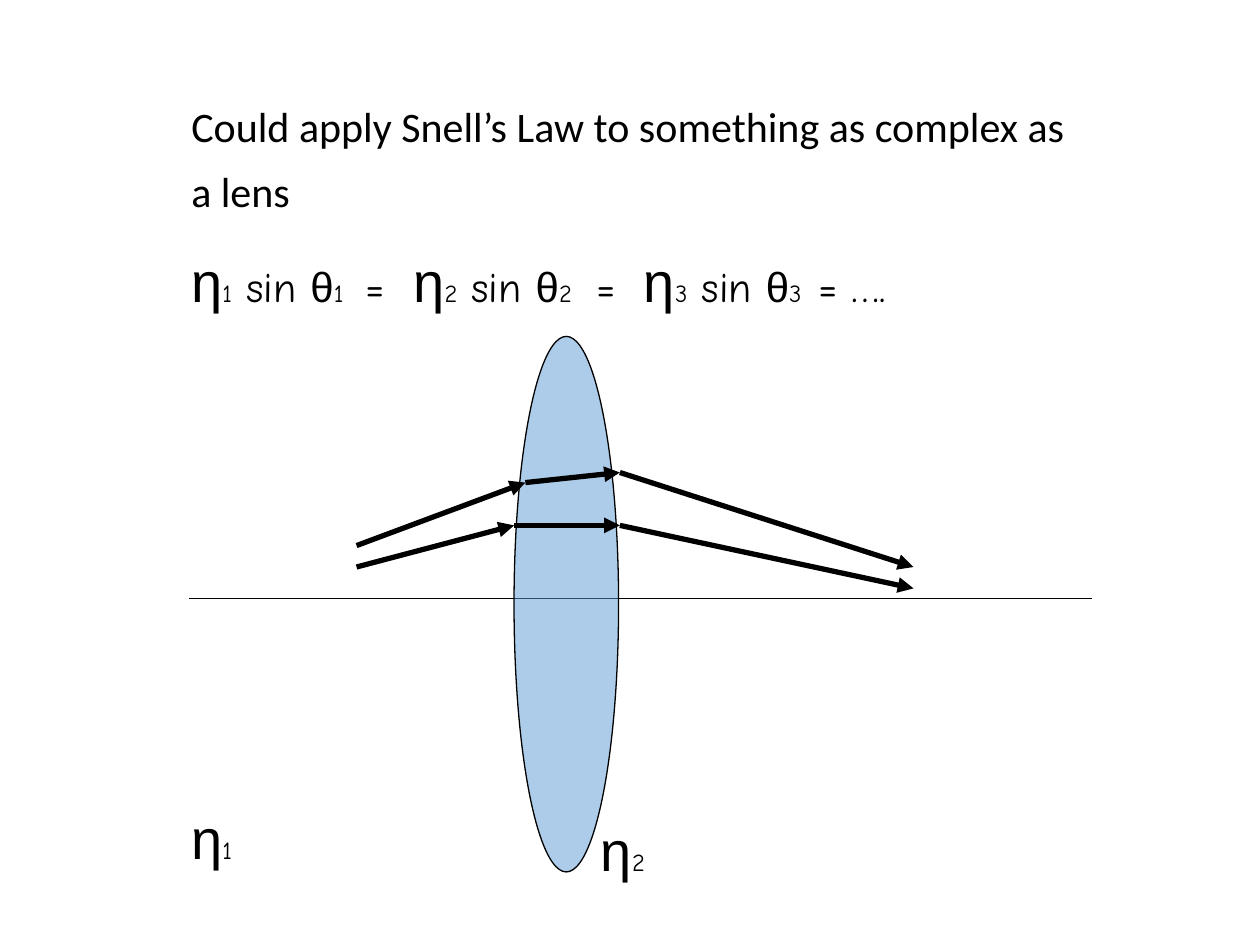
"""Build a slide that applies Snell's Law to rays passing through a lens."""
from lxml.etree import SubElement
from pptx import Presentation
from pptx.dml.color import RGBColor
from pptx.enum.shapes import MSO_CONNECTOR, MSO_SHAPE
from pptx.enum.text import MSO_AUTO_SIZE
from pptx.oxml.ns import qn
from pptx.util import Inches, Pt

COLORS = {"ink": "000000", "lens": "5B9BD5"}
INK = RGBColor.from_string(COLORS["ink"])
GREEK, LATIN, TITLE = "Arial", "Comic Neue", "Calibri"


def add_text(slide, box, paragraphs, wrap=False, space_before=None):
    shape = slide.shapes.add_textbox(*map(Inches, box))
    frame = shape.text_frame
    frame.word_wrap = wrap
    frame.auto_size = MSO_AUTO_SIZE.SHAPE_TO_FIT_TEXT
    for index, runs in enumerate(paragraphs):
        paragraph = frame.add_paragraph() if index else frame.paragraphs[0]
        if space_before:
            spacing = SubElement(paragraph._p.get_or_add_pPr(), qn("a:spcBef"))
            SubElement(spacing, qn("a:spcPct"), val=str(space_before * 1000))
        for text, size, font in runs:
            run = paragraph.add_run()
            run.text = text
            run.font.size = Pt(size)
            run.font.name = font
            run.font.color.rgb = INK


def add_line(slide, start, end, width=3, arrow=True):
    points = map(Inches, (*start, *end))
    connector = slide.shapes.add_connector(MSO_CONNECTOR.STRAIGHT, *points)
    connector.line.color.rgb = INK
    connector.line.width = Pt(width)
    if arrow:
        SubElement(connector.line._get_or_add_ln(), qn("a:tailEnd"), type="triangle")
    SubElement(connector._element.spPr, qn("a:effectLst"))


presentation = Presentation()
presentation.slide_width = Inches(10)
presentation.slide_height = Inches(7.5)
slide = presentation.slides.add_slide(presentation.slide_layouts[6])

heading = [
    ("Could apply Snell’s Law to something as complex as a lens", 24, TITLE),
    ("\t", 32, TITLE),
]
equation = []
for number, gap, equals in (("1", " ", " =  "), ("2", "   ", "=  "), ("3", "  ", "= ….")):
    equation += [
        ("η", 32, GREEK),
        (number, 14, LATIN),
        (" sin ", 24, LATIN),
        ("θ", 24, GREEK),
        (number + gap, 14, LATIN),
        (equals, 24, LATIN),
    ]
add_text(slide, (1.42, 0.75, 7.17, 2.81), [heading, equation], wrap=True, space_before=50)

add_line(slide, (1.5, 4.75), (8.67, 4.75), width=0.75, arrow=False)

for number, box in (("1", (1.42, 6.33, 0.56, 0.63)), ("2", (4.67, 6.42, 0.59, 0.63))):
    add_text(slide, box, [[("η", 32, GREEK), (number, 14, LATIN)]])

lower_ray = [(2.83, 4.5), (4.08, 4.17), (4.92, 4.17), (7.25, 4.67)]
upper_ray = [(2.83, 4.33), (4.17, 3.83), (4.92, 3.75), (7.25, 4.5)]
rays = (lower_ray, upper_ray)

for ray in rays:
    add_line(slide, ray[2], ray[3])

lens = slide.shapes.add_shape(
    MSO_SHAPE.OVAL, Inches(4.08), Inches(2.67), Inches(0.83), Inches(4.25)
)
lens.shadow.inherit = False
lens.fill.solid()
lens.fill.fore_color.rgb = RGBColor.from_string(COLORS["lens"])
lens_color = lens._element.spPr.find(qn("a:solidFill")).find(qn("a:srgbClr"))
SubElement(lens_color, qn("a:alpha"), val="50000")
lens.line.color.rgb = INK
lens.line.width = Pt(0.75)

for segment in (1, 0):
    for ray in rays:
        add_line(slide, ray[segment], ray[segment + 1])

presentation.save("out.pptx")
